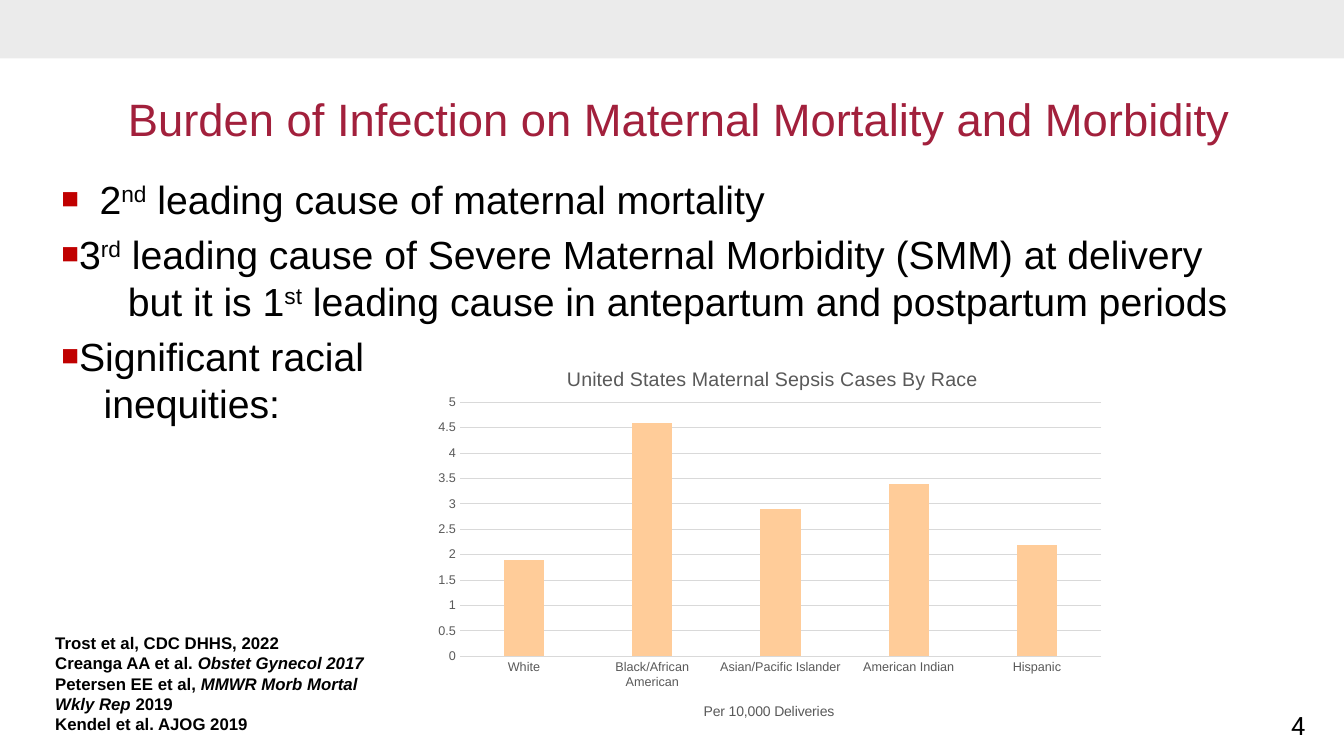
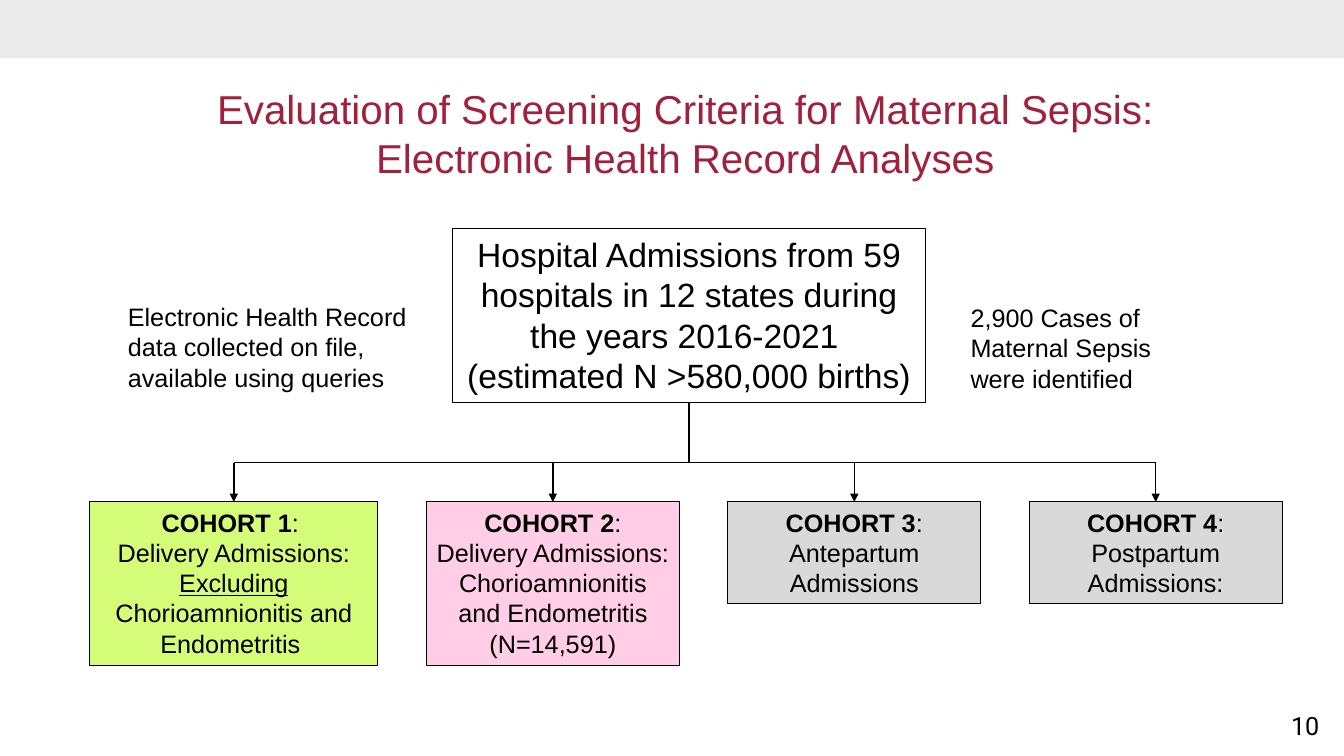
from dataclasses import dataclass, field
from itertools import accumulate

from lxml import etree
from pptx import Presentation
from pptx.chart.data import CategoryChartData
from pptx.dml.color import RGBColor
from pptx.enum.chart import XL_CHART_TYPE, XL_TICK_MARK
from pptx.enum.shapes import MSO_CONNECTOR, MSO_SHAPE
from pptx.enum.text import MSO_ANCHOR, PP_ALIGN
from pptx.oxml.ns import qn
from pptx.util import Inches, Pt

RECTANGLE = MSO_SHAPE.RECTANGLE
STRAIGHT = MSO_CONNECTOR.STRAIGHT
COLUMNS = XL_CHART_TYPE.COLUMN_CLUSTERED
NO_TICK = XL_TICK_MARK.NONE
TOP, MIDDLE = MSO_ANCHOR.TOP, MSO_ANCHOR.MIDDLE
LEFT, CENTER = PP_ALIGN.LEFT, PP_ALIGN.CENTER
SITE_TOP, SITE_BOTTOM = 0, 2

SLIDE_COLUMNS, SLIDE_ROWS = 133.33, 75  # grid cells of a tenth of an inch
COLORS = {
    "band": "E3E3E3", "title": "A2203C", "text": "000000", "bullet": "C00000",
    "bar": "FFCC99", "label": "595959", "grid": "D9D9D9",
    "green": "D5FC79", "pink": "FFCEE6", "gray": "D9D9D9",
}
BOLD = {"bold": True}
BOLD_ITALIC = {"bold": True, "italic": True}
UNDERLINE = {"underline": True}
RAISED = {"baseline": "30000"}


@dataclass(frozen=True)
class Area:
    left: float
    top: float
    width: float
    height: float

    @property
    def lengths(self) -> list[int]:
        return [cells(n) for n in (self.left, self.top, self.width, self.height)]


@dataclass(frozen=True)
class Span:
    text: str
    look: dict = field(default_factory=dict)


@dataclass(frozen=True)
class Style:
    size: float
    color: str = "text"
    font: str = "Arial"
    align: int = LEFT
    anchor: int = TOP
    wrap: bool = True


@dataclass(frozen=True)
class Bullet:
    spans: list[Span]
    margin: float
    indent: float
    tab: float = 0


@dataclass(frozen=True)
class Cohort:
    width: float
    height: float
    color: str
    spans: list[Span]


NUMBER_STYLE = Style(18, font="Roboto", wrap=False)
BODY_STYLE = Style(28)
SOURCE_STYLE = Style(12)
NOTE_STYLE = Style(18)
HUB_STYLE = Style(24, align=CENTER)
COHORT_STYLE = Style(18, align=CENTER)

BULLETS = [
    Bullet([Span("2"), Span("nd", RAISED),
            Span(" leading cause of maternal mortality")], 3.8, -3.8),
    Bullet([Span("3"), Span("rd", RAISED),
            Span(" leading cause of Severe Maternal Morbidity (SMM) at delivery \n"
                 "\tbut it is 1"),
            Span("st", RAISED),
            Span(" leading cause in antepartum and postpartum periods")], 1.3, -3.7, 6.6),
    Bullet([Span("Significant racial\n\tinequities:")], 1.3, -3.7, 4.2),
]
SOURCES = [
    [Span("Trost et al, CDC DHHS, 2022", BOLD)],
    [Span("Creanga AA et al. ", BOLD), Span("Obstet Gynecol 2017", BOLD_ITALIC)],
    [Span("Petersen EE et al, ", BOLD), Span("MMWR Morb Mortal Wkly Rep ", BOLD_ITALIC),
     Span("2019", BOLD)],
    [Span("Kendel et al. AJOG 2019", BOLD)],
]
SEPSIS_CASES = {
    "White": 1.9, "Black/African American": 4.6, "Asian/Pacific Islander": 2.9,
    "American Indian": 3.4, "Hispanic": 2.2,
}

COHORT_LEFT, COHORT_TOP, COHORT_GAP, RAIL_TOP = 8.9, 49.8, 4.8, 45.9
COHORTS = [
    Cohort(28.6, 16.2, "green", [
        Span("COHORT 1", BOLD), Span(": \nDelivery Admissions: "),
        Span("Excluding", UNDERLINE), Span(" Chorioamnionitis and Endometritis ")]),
    Cohort(25.1, 16.2, "pink", [
        Span("COHORT 2", BOLD),
        Span(": Delivery Admissions: Chorioamnionitis and Endometritis (N=14,591)")]),
    Cohort(25.1, 10.1, "gray", [
        Span("COHORT 3", BOLD), Span(": Antepartum Admissions")]),
    Cohort(25.1, 10.1, "gray", [
        Span("COHORT 4", BOLD), Span(": Postpartum Admissions:")]),
]
NOTES = [
    (Area(11.7, 29.4, 32.5, 10.1),
     "Electronic Health Record data collected on file, \navailable using queries"),
    (Area(95.3, 29.5, 20.7, 10.1), "2,900 Cases of Maternal Sepsis were identified"),
]


def cells(count: float) -> int:
    return Inches(count / 10)


def rgb(name: str) -> RGBColor:
    return RGBColor.from_string(COLORS[name])


def add_child(parent, tag: str, **attributes: str):
    child = etree.SubElement(parent, qn(tag))
    for name, value in attributes.items():
        child.set(name, value)
    return child


def set_font(font, style: Style, look: dict | None = None) -> None:
    values = {"size": Pt(style.size), "name": style.font, "bold": False} | (look or {})
    for name, value in values.items():
        setattr(font, name, value)
    font.color.rgb = rgb(style.color)


def write_spans(para, spans: list[Span], style: Style) -> None:
    para.alignment = style.align
    for span in spans:
        look = dict(span.look)
        baseline = look.pop("baseline", None)
        for index, line in enumerate(span.text.split("\n")):
            if index:
                para.add_line_break()
            run = para.add_run()
            run.text = line
            set_font(run.font, style, look)
            if baseline:
                run._r.get_or_add_rPr().set("baseline", baseline)


def write_text(box, paragraphs: list[list[Span]], style: Style) -> list:
    frame = box.text_frame
    frame.word_wrap = style.wrap
    frame.vertical_anchor = style.anchor
    paras = [frame.paragraphs[0]] + [frame.add_paragraph() for _ in paragraphs[1:]]
    for para, spans in zip(paras, paragraphs):
        write_spans(para, spans, style)
    return paras


def add_text(page, area: Area, paragraphs: list[list[Span]], style: Style) -> list:
    return write_text(page.shapes.add_textbox(*area.lengths), paragraphs, style)


def add_box(page, area: Area, color: str | None, outlined: bool = True):
    box = page.shapes.add_shape(RECTANGLE, *area.lengths)
    box.shadow.inherit = False
    if color:
        box.fill.solid()
        box.fill.fore_color.rgb = rgb(color)
    else:
        box.fill.background()
    if outlined:
        box.line.color.rgb = rgb("text")
        box.line.width = Pt(0.75)
    else:
        box.line.fill.background()
    return box


def add_line(page, start: tuple, end: tuple, arrow: bool = False):
    line = page.shapes.add_connector(STRAIGHT, *map(cells, start + end))
    line.line.color.rgb = rgb("text")
    line.line.width = Pt(1)
    if arrow:
        add_child(line.line._get_or_add_ln(), "a:tailEnd", type="triangle")
    add_child(line._element.spPr, "a:effectLst")
    return line


def add_page(deck, title: str, title_area: Area, title_size: float, number: int):
    """Add a blank slide with the shared band, title and page number."""
    page = deck.slides.add_slide(deck.slide_layouts[6])
    band = add_box(page, Area(0, 0, SLIDE_COLUMNS, 5.8), "band", outlined=False)
    color = band._element.spPr.find(".//" + qn("a:srgbClr"))
    add_child(color, "a:alpha", val="70000")
    add_text(page, Area(127.1, 70, 5.1, 4), [[Span(str(number))]], NUMBER_STYLE)
    title_style = Style(title_size, "title", align=CENTER, anchor=MIDDLE)
    add_text(page, title_area, [[Span(title)]], title_style)
    return page


def format_bullet(para, bullet: Bullet) -> None:
    settings = para._p.get_or_add_pPr()
    settings.set("marL", str(cells(bullet.margin)))
    settings.set("indent", str(cells(bullet.indent)))
    add_child(add_child(settings, "a:buClr"), "a:srgbClr", val=COLORS["bullet"])
    add_child(settings, "a:buSzPct", val="75000")
    add_child(settings, "a:buFont", typeface="Arial")
    add_child(settings, "a:buChar", char="■")
    if bullet.tab:
        add_child(add_child(settings, "a:tabLst"), "a:tab",
                  pos=str(cells(bullet.tab)), algn="l")


def place_in_chart(element, **shares: float) -> None:
    """Fix a chart part at shares of the chart's size."""
    for old in element.findall(qn("c:layout")):
        element.remove(old)
    layout = etree.Element(qn("c:layout"))
    element.insert(len(element.findall(qn("c:tx"))), layout)
    manual = add_child(layout, "c:manualLayout")
    if "w" in shares:
        add_child(manual, "c:layoutTarget", val="inner")
    for axis in "xy":
        add_child(manual, f"c:{axis}Mode", val="edge")
    for name, share in shares.items():
        add_child(manual, f"c:{name}", val=str(share))


def add_sepsis_chart(page, area: Area) -> None:
    data = CategoryChartData()
    data.categories = list(SEPSIS_CASES)
    data.add_series("Series 1", list(SEPSIS_CASES.values()))
    chart = page.shapes.add_chart(COLUMNS, *area.lengths, data).chart
    set_font(chart.font, Style(10))
    chart.has_legend = False
    plot = chart.plots[0]
    plot.gap_width, plot.overlap, plot.vary_by_categories = 219, -27, False
    bars = plot.series[0].format.fill
    bars.solid()
    bars.fore_color.rgb = rgb("bar")

    category_axis, value_axis = chart.category_axis, chart.value_axis
    for axis in (category_axis, value_axis):
        axis.major_tick_mark = axis.minor_tick_mark = NO_TICK
        set_font(axis.tick_labels.font, Style(9, "label"))
    value_axis.minimum_scale, value_axis.maximum_scale = 0, 5
    value_axis.major_unit = 0.5
    value_axis.format.line.fill.background()
    for line in (category_axis.format.line, value_axis.major_gridlines.format.line):
        line.color.rgb = rgb("grid")
        line.width = Pt(0.75)

    for title, text, size, x, y in (
        (chart.chart_title, "United States Maternal Sepsis Cases By Race", 14, 0.2, 0.05),
        (category_axis.axis_title, "Per 10,000 Deliveries", 10, 0.4, 0.9),
    ):
        write_spans(title.text_frame.paragraphs[0], [Span(text)],
                    Style(size, "label", align=CENTER))
        place_in_chart(title._element, x=x, y=y)
    plot_area = chart._chartSpace.find(".//" + qn("c:plotArea"))
    place_in_chart(plot_area, x=0.05, y=0.15, w=0.93, h=0.64)


def build_burden(deck) -> None:
    page = add_page(deck, "Burden of Infection on Maternal Mortality and Morbidity",
                    Area(10.7, 7.4, 113.3, 8.7), 32.4, 4)
    paras = add_text(page, Area(5.1, 16.9, 128.2, 42.5),
                     [bullet.spans for bullet in BULLETS], BODY_STYLE)
    for para, bullet in zip(paras, BULLETS):
        format_bullet(para, bullet)
    for para in paras[1:]:
        para.space_before = Pt(5.6)
    add_text(page, Area(4.5, 62.3, 35, 11.1), SOURCES, SOURCE_STYLE)
    add_sepsis_chart(page, Area(42.2, 34, 68.4, 39.4))


def build_cohorts(deck) -> None:
    page = add_page(deck, "Evaluation of Screening Criteria for Maternal Sepsis:\n"
                    "Electronic Health Record Analyses", Area(8.2, 8.2, 119.6, 10), 28.8, 10)
    hub_area = Area(44.9, 22.7, 46.9, 17.2)
    hub = add_box(page, hub_area, None)
    write_text(hub, [[Span("Hospital Admissions from 59 hospitals in 12 states during "
                           "the years 2016-2021 \n(estimated N >580,000 births)")]], HUB_STYLE)
    for area, note in NOTES:
        add_text(page, area, [[Span(note)]], NOTE_STYLE)

    steps = [cohort.width + COHORT_GAP for cohort in COHORTS[:-1]]
    lefts = list(accumulate(steps, initial=COHORT_LEFT))
    centers = [left + cohort.width / 2 for left, cohort in zip(lefts, COHORTS)]
    for left, center, cohort in zip(lefts, centers, COHORTS):
        box = add_box(page, Area(left, COHORT_TOP, cohort.width, cohort.height), cohort.color)
        write_text(box, [cohort.spans], COHORT_STYLE)
        drop = add_line(page, (center, RAIL_TOP), (center, COHORT_TOP), arrow=True)
        drop.end_connect(box, SITE_TOP)
    add_line(page, (centers[0], RAIL_TOP), (centers[-1], RAIL_TOP))
    middle = hub_area.left + hub_area.width / 2
    trunk = add_line(page, (middle, hub_area.top + hub_area.height), (middle, RAIL_TOP))
    trunk.begin_connect(hub, SITE_BOTTOM)


def main() -> None:
    deck = Presentation()
    deck.slide_width, deck.slide_height = cells(SLIDE_COLUMNS), cells(SLIDE_ROWS)
    build_burden(deck)
    build_cohorts(deck)
    deck.save("out.pptx")


if __name__ == "__main__":
    main()
